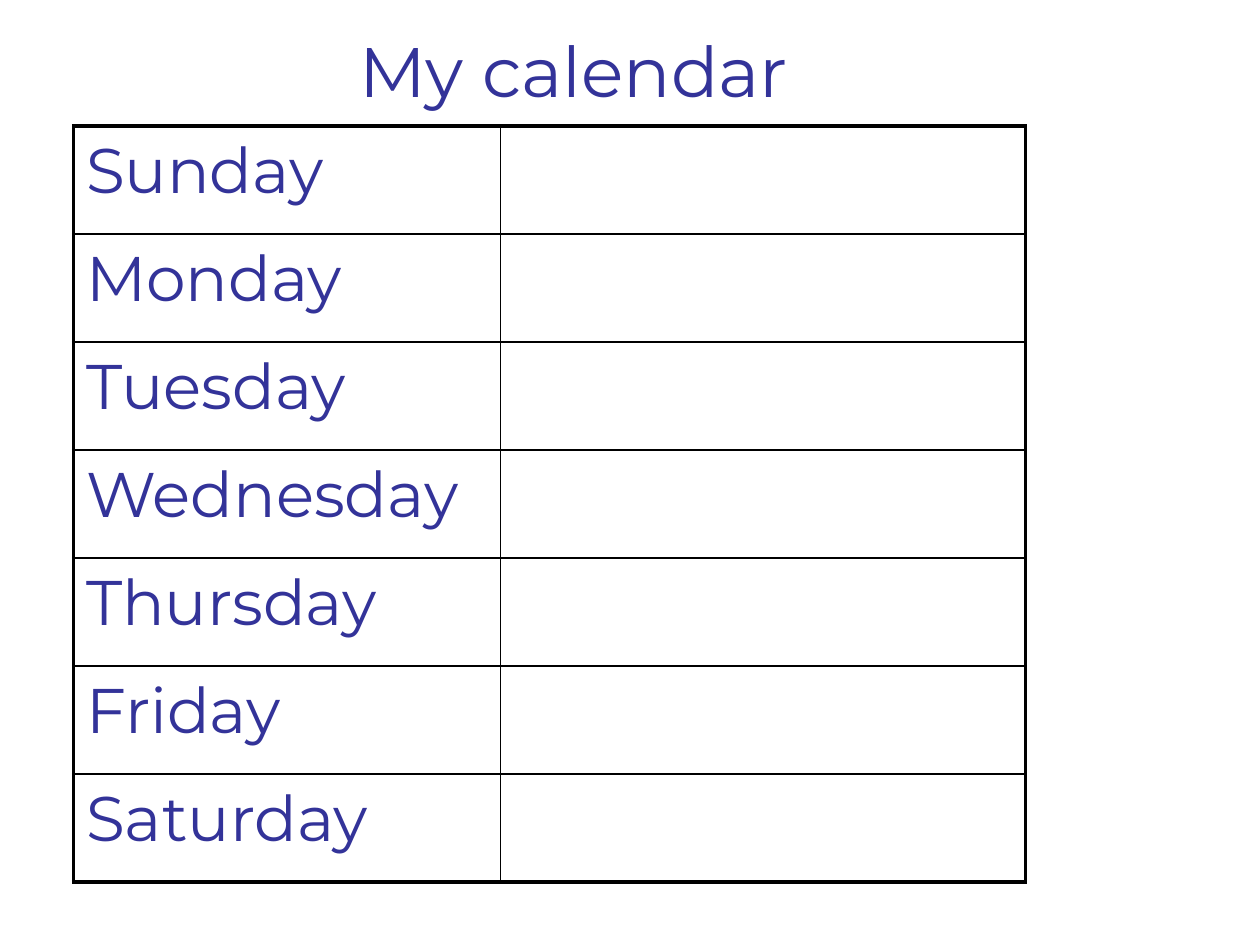
from lxml.etree import SubElement
from pptx import Presentation
from pptx.dml.color import RGBColor
from pptx.enum.text import MSO_ANCHOR, MSO_AUTO_SIZE, PP_ALIGN
from pptx.oxml.ns import qn
from pptx.util import Pt

COLORS = {"text": "333399", "border": "000000", "background": "FFFFFF"}
FONT = "Montserrat"
THICK, THIN = 2.25, 1
DAYS = ["Sunday", "Monday", "Tuesday", "Wednesday", "Thursday", "Friday", "Saturday"]


def write(frame, text, size, space_before=None):
    """Fill the frame with one left-aligned line; space_before is a percentage."""
    para = frame.paragraphs[0]
    para.alignment = PP_ALIGN.LEFT
    if space_before:
        spacing = SubElement(para._p.get_or_add_pPr(), qn("a:spcBef"))
        SubElement(spacing, qn("a:spcPct"), val=str(space_before * 1000))
    span = para.add_run()
    span.text = text
    span.font.name = FONT
    span.font.size = Pt(size)
    span.font.color.rgb = RGBColor.from_string(COLORS["text"])


def set_borders(cell, **widths):
    """Draw the cell's edges, given in the order L, R, T, B."""
    properties = cell._tc.get_or_add_tcPr()
    for side, width in widths.items():
        line = SubElement(properties, qn(f"a:ln{side}"), w=str(Pt(width)))
        fill = SubElement(line, qn("a:solidFill"))
        SubElement(fill, qn("a:srgbClr"), val=COLORS["border"])


def add_title(page, text, left, top, width, height):
    title = page.shapes.title
    title.left, title.top, title.width, title.height = map(Pt, (left, top, width, height))
    frame = title.text_frame
    frame.word_wrap = False
    frame.auto_size = MSO_AUTO_SIZE.SHAPE_TO_FIT_TEXT
    frame.vertical_anchor = MSO_ANCHOR.TOP
    write(frame, text, size=40)


def add_calendar(page, days, left, top, width, height, day_width):
    """Add a table with a row for each day and an empty column for notes."""
    last = len(days) - 1
    box = map(Pt, (left, top, width, height))
    table = page.shapes.add_table(len(days), 2, *box).table
    table.first_row = table.horz_banding = False
    table.columns[0].width = Pt(day_width)
    table.columns[1].width = Pt(width - day_width)
    for index, day in enumerate(days):
        table.rows[index].height = Pt(height / len(days))
        for column in range(2):
            cell = table.cell(index, column)
            set_borders(
                cell,
                L=THICK if column == 0 else THIN,
                R=THICK if column == 1 else THIN,
                T=THICK if index == 0 else THIN,
                B=THICK if index == last else THIN,
            )
            cell.fill.background()
        write(table.cell(index, 0).text_frame, day, size=36, space_before=20)


def main():
    deck = Presentation()
    deck.slide_width, deck.slide_height = Pt(720), Pt(540)
    page = deck.slides.add_slide(deck.slide_layouts[5])
    page.background.fill.solid()
    page.background.fill.fore_color.rgb = RGBColor.from_string(COLORS["background"])
    add_calendar(page, DAYS, left=42, top=72, width=544, height=432, day_width=244)
    add_title(page, "My calendar", left=198, top=12, width=281, height=55.5)
    deck.save("out.pptx")


if __name__ == "__main__":
    main()
